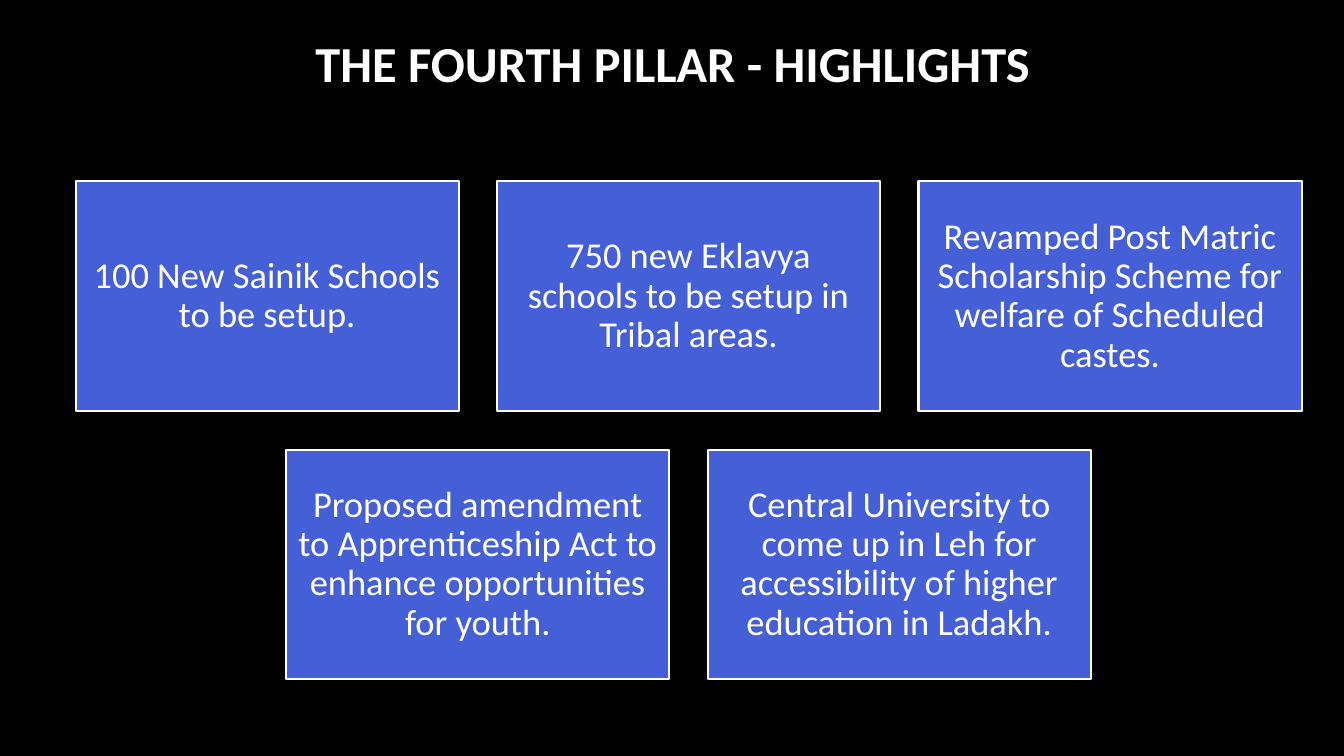
from pptx import Presentation
from pptx.dml.color import RGBColor
from pptx.enum.shapes import MSO_SHAPE as Shape
from pptx.enum.text import MSO_ANCHOR as Anchor, PP_ALIGN as Align
from pptx.util import Inches, Pt

TITLE = "THE FOURTH PILLAR - HIGHLIGHTS"
ROWS = [
    [
        "100 New Sainik Schools to be setup.",
        "750 new Eklavya schools to be setup in Tribal areas.",
        "Revamped Post Matric Scholarship Scheme for welfare of Scheduled castes.",
    ],
    [
        "Proposed amendment to Apprenticeship Act to enhance opportunities for youth.",
        "Central University to come up in Leh for accessibility of higher education in Ladakh.",
    ],
]

BLACK = RGBColor(0x00, 0x00, 0x00)
WHITE = RGBColor(0xFF, 0xFF, 0xFF)
BLUE = RGBColor(0x45, 0x5F, 0xD6)

WIDTH, HEIGHT, GAP = 3.8, 2.28, 0.38
MID, TOP = 6.83, 1.8
INSET = Inches(0.11)


def style(frame, size, bold=False):
    frame.word_wrap = True
    frame.vertical_anchor = Anchor.MIDDLE
    para = frame.paragraphs[0]
    para.alignment = Align.CENTER
    para.line_spacing = 0.9
    font = para.runs[0].font
    font.name, font.size, font.bold = "Calibri", Pt(size), bold
    font.color.rgb = WHITE


def add_card(slide, text, left, top):
    card = slide.shapes.add_shape(
        Shape.RECTANGLE, Inches(left), Inches(top), Inches(WIDTH), Inches(HEIGHT)
    )
    card.shadow.inherit = False
    card.fill.solid()
    card.fill.fore_color.rgb = BLUE
    card.line.color.rgb = WHITE
    card.line.width = Pt(1.5)
    frame = card.text_frame
    frame.margin_left = frame.margin_right = INSET
    frame.margin_top = frame.margin_bottom = INSET
    frame.text = text
    style(frame, 26)


def main():
    deck = Presentation()
    deck.slide_width, deck.slide_height = Inches(13.33), Inches(7.5)
    slide = deck.slides.add_slide(deck.slide_layouts[5])
    slide.background.fill.solid()
    slide.background.fill.fore_color.rgb = BLACK

    title = slide.shapes.title
    title.left, title.top = Inches(0.15), Inches(0.16)
    title.width, title.height = Inches(13.05), Inches(1)
    title.text_frame.text = TITLE
    style(title.text_frame, 36, True)

    for row, texts in enumerate(ROWS):
        span = len(texts) * (WIDTH + GAP) - GAP
        for col, text in enumerate(texts):
            left = MID - span / 2 + col * (WIDTH + GAP)
            add_card(slide, text, left, TOP + row * (HEIGHT + GAP))

    deck.save("out.pptx")


if __name__ == "__main__":
    main()
